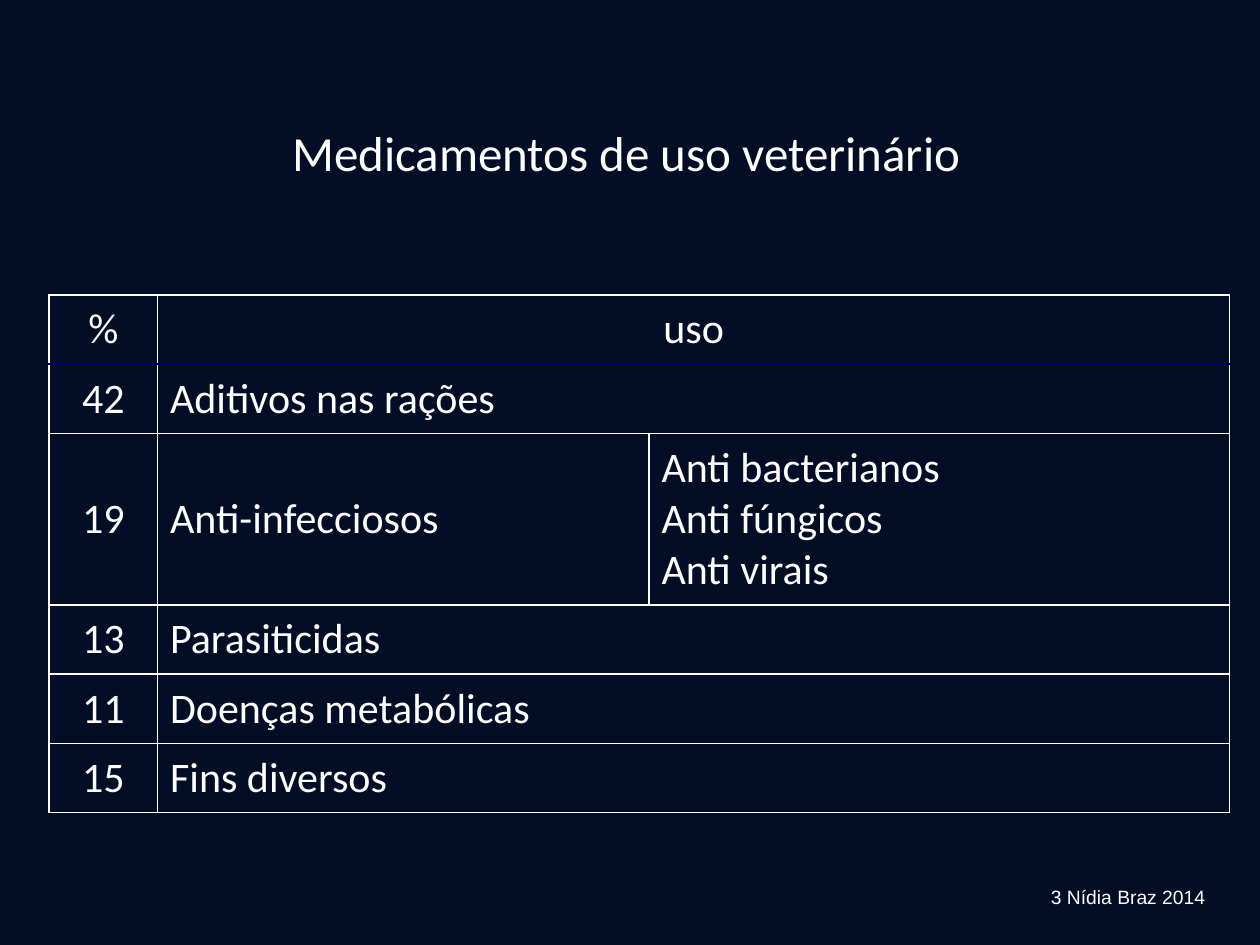
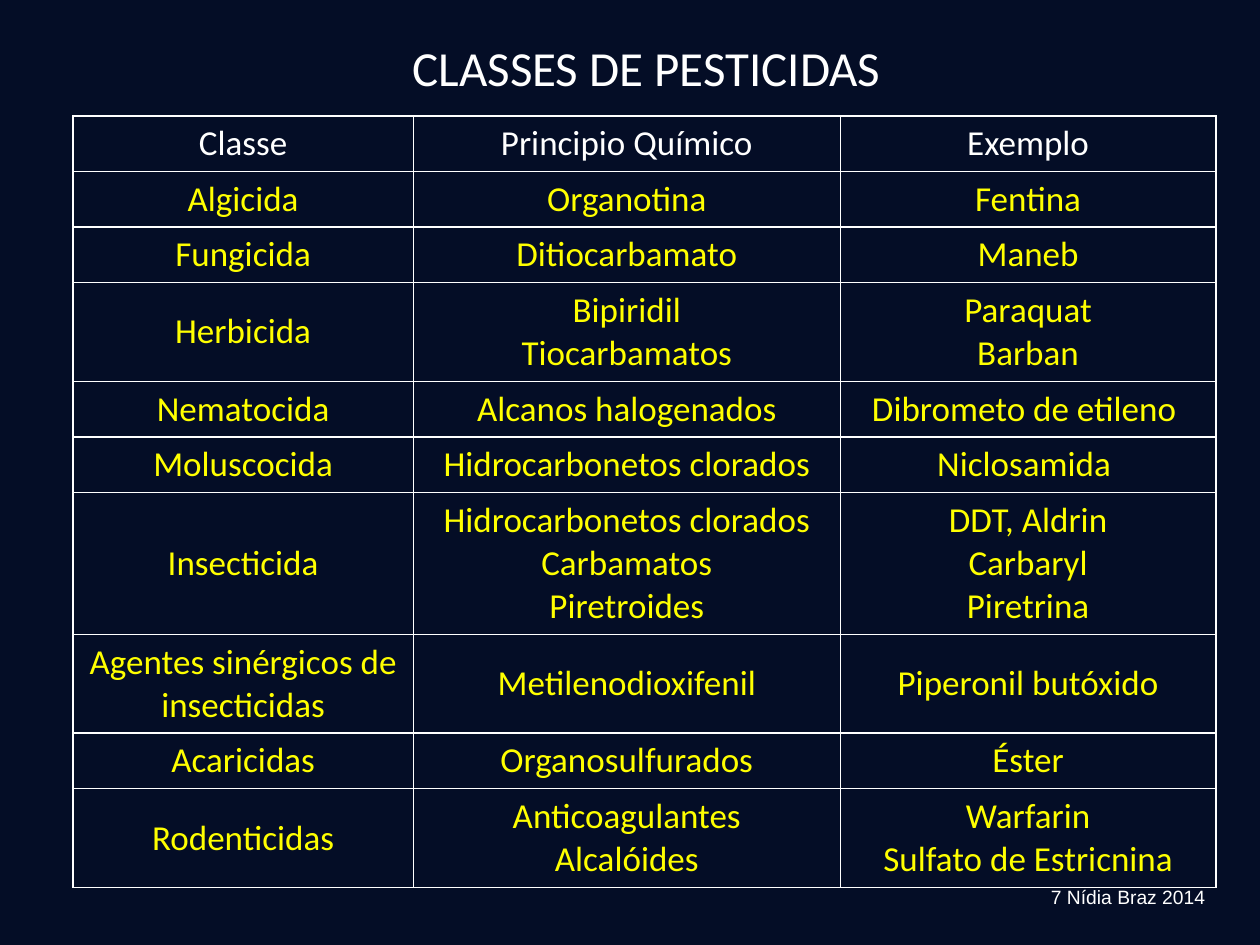
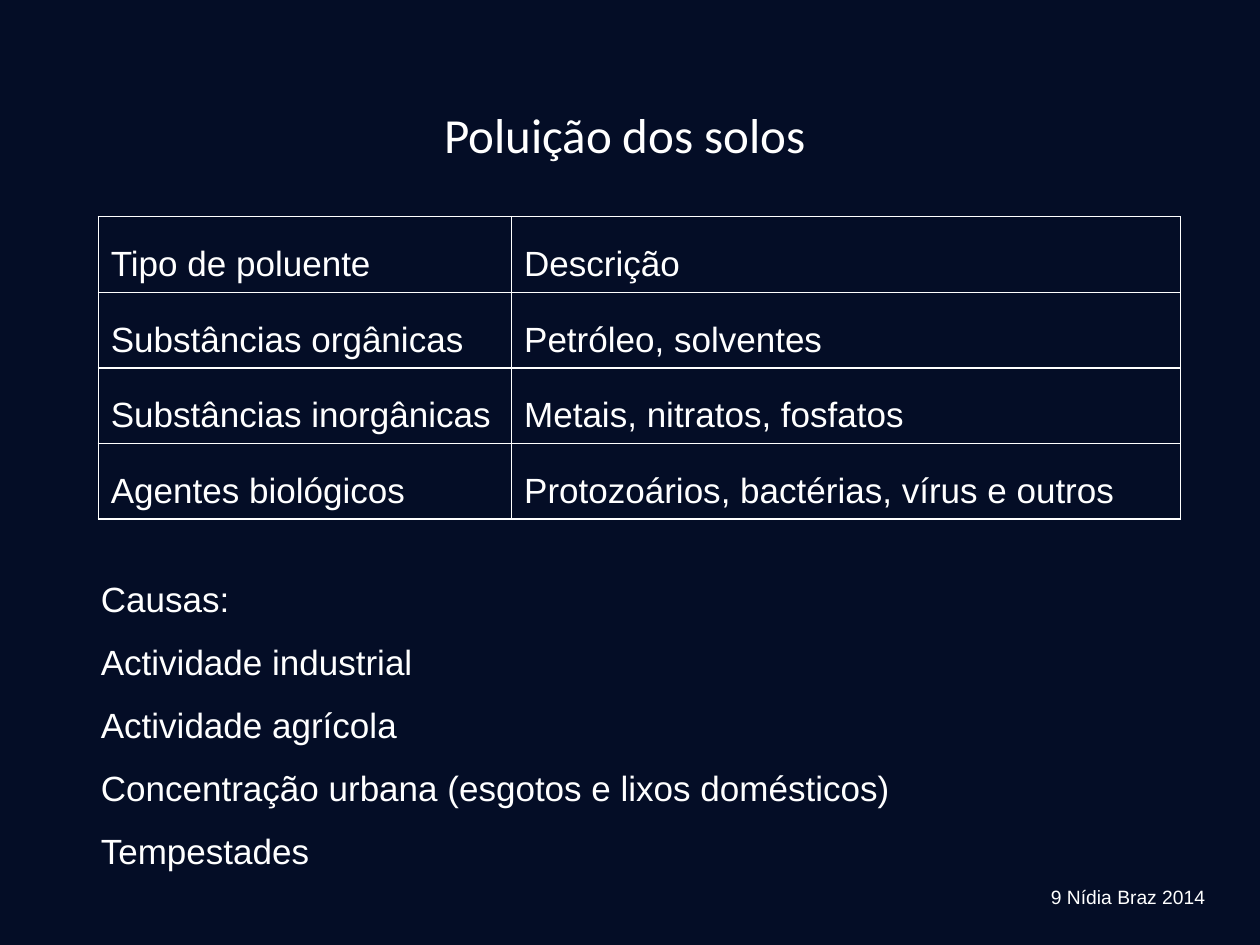
from pptx import Presentation
from pptx.dml.color import RGBColor
from pptx.enum.text import MSO_ANCHOR, MSO_AUTO_SIZE, PP_ALIGN
from pptx.oxml import parse_xml
from pptx.oxml.ns import nsdecls
from pptx.util import Inches, Pt

COLORS = {"night": "040D26", "white": "FFFFFF", "yellow": "FFFF00", "navy": "000066"}
LEFT, CENTER = PP_ALIGN.LEFT, PP_ALIGN.CENTER
TITLE_ONLY, TITLE_AND_CONTENT = 5, 1
FOOTER_BOX = (8.15, 6.98, 1.65, 0.29)

# A row with fewer cells than columns lets its last cell span the rest.
SLIDES = [
    {
        "number": 3,
        "title": "Medicamentos de uso veterinário",
        "title_box": (0.47, 0.92, 9, 0.93),
        "table": {
            "at": (0.39, 2.34), "columns": (0.86, 3.9, 4.61),
            "line": 0.55, "extra_line": 0.405,
            "font": "Calibri", "size": 24, "body_color": "white",
            "header_align": CENTER, "aligns": (CENTER, LEFT, LEFT),
            "header_rule": "navy",
            "rows": [
                ("%", "uso"),
                ("42", "Aditivos nas rações"),
                ("19", "Anti-infecciosos",
                 "Anti bacterianos\nAnti fúngicos\nAnti virais"),
                ("13", "Parasiticidas"),
                ("11", "Doenças metabólicas"),
                ("15", "Fins diversos"),
            ],
        },
    },
    {
        "number": 7,
        "title": "CLASSES DE PESTICIDAS",
        "title_box": (0.67, 0.25, 8.92, 0.69),
        "table": {
            "at": (0.58, 0.92), "columns": (2.7, 3.39, 2.98),
            "line": 0.44, "extra_line": 0.345,
            "font": "Calibri", "size": 20, "body_color": "yellow",
            "header_align": CENTER, "aligns": (CENTER, CENTER, CENTER),
            "header_rule": "white",
            "rows": [
                ("Classe", "Principio Químico", "Exemplo"),
                ("Algicida", "Organotina", "Fentina"),
                ("Fungicida", "Ditiocarbamato", "Maneb"),
                ("Herbicida", "Bipiridil\nTiocarbamatos", "Paraquat\nBarban"),
                ("Nematocida", "Alcanos halogenados", "Dibrometo de etileno "),
                ("Moluscocida", "Hidrocarbonetos clorados", "Niclosamida "),
                ("Insecticida", "Hidrocarbonetos clorados\nCarbamatos\nPiretroides",
                 "DDT, Aldrin\nCarbaryl\nPiretrina"),
                ("Agentes sinérgicos de insecticidas", "Metilenodioxifenil",
                 "Piperonil butóxido"),
                ("Acaricidas", "Organosulfurados", "Éster"),
                ("Rodenticidas", "Anticoagulantes\nAlcalóides",
                 "Warfarin\nSulfato de Estricnina"),
            ],
        },
    },
    {
        "number": 9,
        "title": "Poluição dos solos",
        "title_box": (2.03, 0.78, 5.86, 0.57),
        "table": {
            "at": (0.78, 1.72), "columns": (3.28, 5.31),
            "line": 0.6, "extra_line": 0.5,
            "font": "Arial", "size": 20, "body_color": "white",
            "header_align": LEFT, "aligns": (LEFT, LEFT),
            "header_rule": "white", "spacing": 1.5,
            "rows": [
                ("Tipo de poluente", "Descrição"),
                ("Substâncias orgânicas", "Petróleo, solventes"),
                ("Substâncias inorgânicas", "Metais, nitratos, fosfatos"),
                ("Agentes biológicos", "Protozoários, bactérias, vírus e outros"),
            ],
        },
        "body_box": (0.7, 4.53, 7.03, 2.46),
        "body": ["Causas:", "Actividade industrial", "Actividade agrícola",
                 "Concentração urbana (esgotos e lixos domésticos)", "Tempestades"],
    },
]


def rgb(name):
    return RGBColor.from_string(COLORS[name])


def format_text(frame, font, size, align, color="white", spacing=1.0):
    for para in frame.paragraphs:
        para.alignment = align
        para.line_spacing = spacing
        para.space_before = para.space_after = Pt(0)
        para.font.name, para.font.size, para.font.bold = font, Pt(size), False
        para.font.color.rgb = rgb(color)


def fill_box(shape, box, text, font, size, align, spacing=1.0):
    """Place a text shape and set its text, anchored at the top."""
    shape.left, shape.top, shape.width, shape.height = map(Inches, box)
    frame = shape.text_frame
    frame.text = text
    frame.word_wrap = True
    frame.auto_size = MSO_AUTO_SIZE.NONE
    frame.vertical_anchor = MSO_ANCHOR.TOP
    format_text(frame, font, size, align, spacing=spacing)
    return frame


def add_borders(cell, top, bottom):
    edges = {"lnL": "white", "lnR": "white", "lnT": top, "lnB": bottom}
    properties = cell._tc.get_or_add_tcPr()
    for position, (edge, color) in enumerate(edges.items()):
        properties.insert(position, parse_xml(
            f'<a:{edge} {nsdecls("a")} w="{Pt(1)}"><a:solidFill>'
            f'<a:srgbClr val="{COLORS[color]}"/></a:solidFill></a:{edge}>'))


def line_count(texts):
    """Lines in the tallest cell, before any wrapping."""
    return max(text.count("\n") + 1 for text in texts)


def add_grid(page, data):
    rows, widths = data["rows"], data["columns"]
    heights = [data["line"] + data["extra_line"] * (line_count(row) - 1) for row in rows]
    frame = page.shapes.add_table(
        len(rows), len(widths), *map(Inches, (*data["at"], sum(widths), sum(heights))))
    table = frame.table
    table.first_row = table.horz_banding = False
    for column, width in zip(table.columns, widths):
        column.width = Inches(width)
    for row, height in zip(table.rows, heights):
        row.height = Inches(height)

    for r, texts in enumerate(rows):
        if len(texts) < len(widths):
            table.cell(r, len(texts) - 1).merge(table.cell(r, len(widths) - 1))
        for c in range(len(widths)):
            cell = table.cell(r, c)
            cell.fill.background()
            add_borders(cell, top=data["header_rule"] if r == 1 else "white",
                        bottom=data["header_rule"] if r == 0 else "white")
            if c < len(texts):
                cell.text = texts[c]
                cell.vertical_anchor = MSO_ANCHOR.MIDDLE
                format_text(cell.text_frame, data["font"], data["size"],
                            data["aligns"][c] if r else data["header_align"],
                            data["body_color"] if r else "white",
                            data.get("spacing", 1.0))


def add_body(page, box, lines):
    frame = fill_box(page.placeholders[1], box, "\n".join(lines), "Arial", 20, LEFT, 1.5)
    frame.paragraphs[0].line_spacing = 1.0
    for para in frame.paragraphs:
        properties = para._p.get_or_add_pPr()
        properties.set("marL", "0")
        properties.set("indent", "0")
        bullet = parse_xml(f'<a:buNone {nsdecls("a")}/>')
        properties.insert_element_before(bullet, "a:tabLst", "a:defRPr", "a:extLst")


def add_page(deck, data):
    layout = TITLE_AND_CONTENT if "body" in data else TITLE_ONLY
    page = deck.slides.add_slide(deck.slide_layouts[layout])
    fill_box(page.shapes.title, data["title_box"], data["title"], "Calibri", 28, CENTER)
    footer = page.shapes.add_textbox(*map(Inches, FOOTER_BOX))
    fill_box(footer, FOOTER_BOX, f"{data['number']} Nídia Braz 2014 ", "Arial", 11, CENTER)
    add_grid(page, data["table"])
    if "body" in data:
        add_body(page, data["body_box"], data["body"])


def main():
    deck = Presentation()
    deck.slide_width, deck.slide_height = Inches(10), Inches(7.5)
    background = deck.slide_master.background.fill
    background.solid()
    background.fore_color.rgb = rgb("night")
    for data in SLIDES:
        add_page(deck, data)
    deck.save("out.pptx")


if __name__ == "__main__":
    main()
